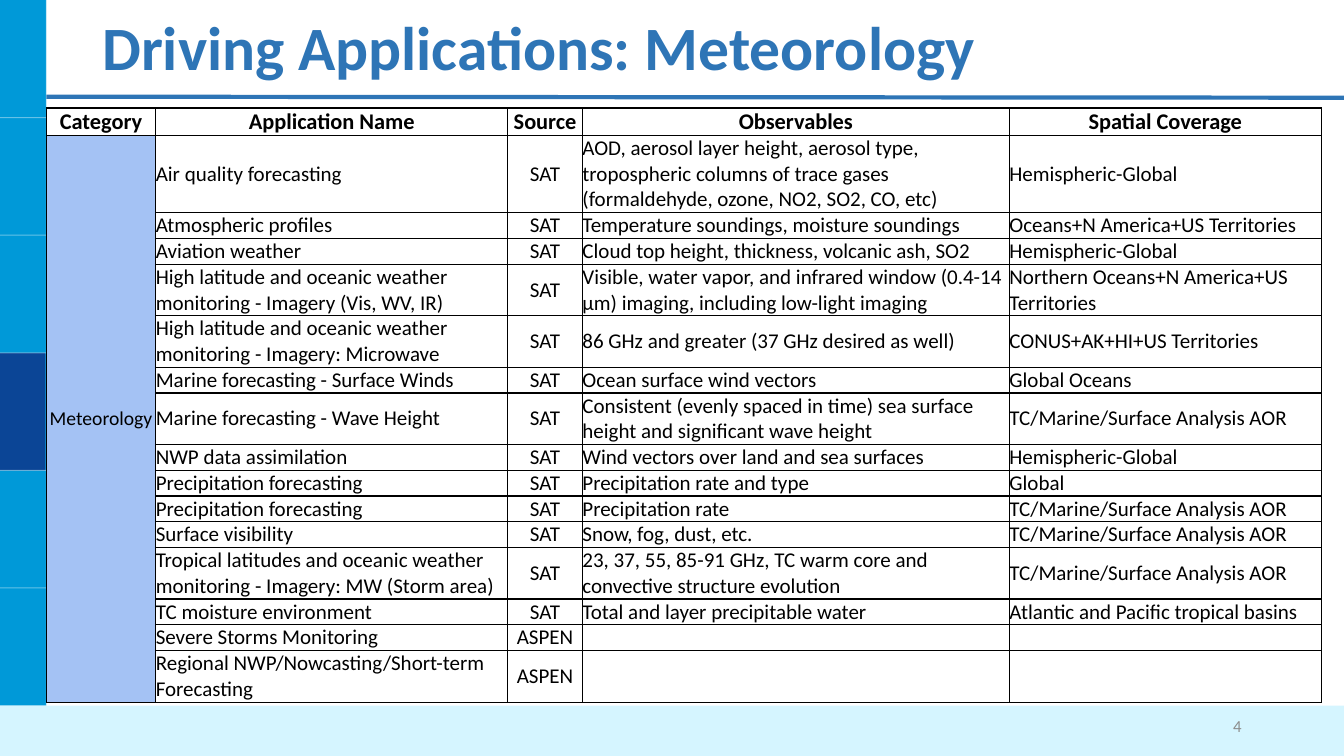
from dataclasses import dataclass

from lxml import etree
from pptx import Presentation
from pptx.dml.color import RGBColor
from pptx.enum.shapes import MSO_CONNECTOR, MSO_SHAPE
from pptx.enum.text import MSO_ANCHOR, PP_ALIGN
from pptx.oxml.ns import qn
from pptx.util import Pt

RECT = MSO_SHAPE.RECTANGLE
STRAIGHT = MSO_CONNECTOR.STRAIGHT
MIDDLE = MSO_ANCHOR.MIDDLE
LEFT, CENTER, RIGHT = PP_ALIGN.LEFT, PP_ALIGN.CENTER, PP_ALIGN.RIGHT


@dataclass(frozen=True)
class Theme:
    font: str = "Calibri"
    blue: str = "2E75B6"
    bar: str = "0099D8"
    mark: str = "0B4596"
    foot: str = "D5F5FF"
    group: str = "A4C2F4"
    ink: str = "000000"
    gray: str = "8C8C8C"
    white: str = "FFFFFF"
    title: int = 44
    head: int = 16
    body: int = 15
    label: int = 14
    page: int = 12


THEME = Theme()
WIDTH, HEIGHT = 960, 540
SIDE = 33.1
STEP = 84
LINE = 18.4
COLS = (78.2, 251.4, 53.4, 305, 222.8)
HEADS = ("Category", "Application Name", "Source", "Observables", "Spatial Coverage")
ALIGNS = (CENTER, LEFT, CENTER, LEFT, LEFT)
AOR = "TC/Marine/Surface Analysis AOR"
# Lines of text in the row, then its cells
ROWS = (
    (3, "Air quality forecasting", "SAT",
     "AOD, aerosol layer height, aerosol type, tropospheric columns of trace gases "
     "(formaldehyde, ozone, NO2, SO2, CO, etc)", "Hemispheric-Global"),
    (1, "Atmospheric profiles", "SAT", "Temperature soundings, moisture soundings",
     "Oceans+N America+US Territories"),
    (1, "Aviation weather", "SAT", "Cloud top height, thickness, volcanic ash, SO2",
     "Hemispheric-Global"),
    (2, "High latitude and oceanic weather monitoring - Imagery (Vis, WV, IR)", "SAT",
     "Visible, water vapor, and infrared window (0.4-14 µm) imaging, "
     "including low-light imaging", "Northern Oceans+N America+US Territories"),
    (2, "High latitude and oceanic weather monitoring - Imagery: Microwave", "SAT",
     "86 GHz and greater (37 GHz desired as well)", "CONUS+AK+HI+US Territories"),
    (1, "Marine forecasting - Surface Winds", "SAT", "Ocean surface wind vectors",
     "Global Oceans"),
    (2, "Marine forecasting - Wave Height", "SAT",
     "Consistent (evenly spaced in time) sea surface height and significant wave height",
     AOR),
    (1, "NWP data assimilation", "SAT", "Wind vectors over land and sea surfaces",
     "Hemispheric-Global"),
    (1, "Precipitation forecasting", "SAT", "Precipitation rate and type", "Global"),
    (1, "Precipitation forecasting", "SAT", "Precipitation rate", AOR),
    (1, "Surface visibility", "SAT", "Snow, fog, dust, etc.", AOR),
    (2, "Tropical latitudes and oceanic weather monitoring - Imagery: MW (Storm area)",
     "SAT", "23, 37, 55, 85-91 GHz, TC warm core and convective structure evolution", AOR),
    (1, "TC moisture environment", "SAT", "Total and layer precipitable water",
     "Atlantic and Pacific tropical basins"),
    (1, "Severe Storms Monitoring", "ASPEN", "", ""),
    (2, "Regional NWP/Nowcasting/Short-term Forecasting", "ASPEN", "", ""),
)


def rgb(color):
    return RGBColor.from_string(color)


def add_rect(slide, box, color):
    shape = slide.shapes.add_shape(RECT, *map(Pt, box))
    shape.shadow.inherit = False
    shape.fill.solid()
    shape.fill.fore_color.rgb = rgb(color)
    shape.line.fill.background()


def add_line(slide, ends, color, width, alpha=None):
    """Draw a line; alpha is its opacity in percent."""
    line = slide.shapes.add_connector(STRAIGHT, *map(Pt, ends))
    line.line.color.rgb = rgb(color)
    line.line.width = Pt(width)
    props = line._element.spPr
    etree.SubElement(props, qn("a:effectLst"))
    if alpha:
        tint = props.find(".//" + qn("a:srgbClr"))
        etree.SubElement(tint, qn("a:alpha"), val=str(alpha * 1000))


def write(frame, text, size, color, align=LEFT, bold=False):
    para = frame.paragraphs[0]
    para.alignment = align
    if not text:
        etree.SubElement(para._p, qn("a:endParaRPr"), sz=str(size * 100))
        return para
    run = para.add_run()
    run.text = text
    style = {"name": THEME.font, "size": Pt(size), "bold": bold}
    for key, value in style.items():
        setattr(run.font, key, value)
    run.font.color.rgb = rgb(color)
    return para


def add_text(slide, box, text, size, color, align=LEFT, bold=False):
    frame = slide.shapes.add_textbox(*map(Pt, box)).text_frame
    frame.word_wrap = True
    frame.vertical_anchor = MIDDLE
    return write(frame, text, size, color, align, bold)


def add_edges(cell):
    props = cell._tc.get_or_add_tcPr()
    for side in ("lnL", "lnR", "lnT", "lnB"):
        edge = etree.SubElement(props, qn("a:" + side), w=str(Pt(1)))
        fill = etree.SubElement(edge, qn("a:solidFill"))
        etree.SubElement(fill, qn("a:srgbClr"), val=THEME.ink)


def fill_cell(cell, text, size, align, bold=False, color=None):
    add_edges(cell)
    style = {"margin_left": 0, "margin_right": 0, "margin_top": 0,
             "margin_bottom": 0, "vertical_anchor": MIDDLE}
    for key, value in style.items():
        setattr(cell, key, value)
    if color:
        cell.fill.solid()
        cell.fill.fore_color.rgb = rgb(color)
    else:
        cell.fill.background()
    write(cell.text_frame, text, size, THEME.ink, align, bold)


def add_grid(slide):
    tall = [19.6] + [LINE * row[0] for row in ROWS]
    box = (SIDE, 77.2, sum(COLS), sum(tall))
    table = slide.shapes.add_table(len(tall), len(COLS), *map(Pt, box)).table
    table.first_row = table.horz_banding = False
    for col, width in zip(table.columns, COLS):
        col.width = Pt(width)
    for row, height in zip(table.rows, tall):
        row.height = Pt(height)
    for c, text in enumerate(HEADS):
        fill_cell(table.cell(0, c), text, THEME.head, CENTER, bold=True)
    for r, (_, *texts) in enumerate(ROWS, 1):
        group = "Meteorology" if r == 1 else ""
        fill_cell(table.cell(r, 0), group, THEME.label, CENTER, color=THEME.group)
        for c, text in enumerate(texts, 1):
            fill_cell(table.cell(r, c), text, THEME.body, ALIGNS[c])
    table.cell(1, 0).merge(table.cell(len(ROWS), 0))


def add_frame(slide):
    """Draw the side bar, the footer and the rule under the title."""
    add_rect(slide, (0, 0, SIDE, HEIGHT), THEME.bar)
    add_rect(slide, (0, 3 * STEP, 32.4, STEP), THEME.mark)
    for n in range(1, 7):
        add_line(slide, (0, n * STEP, SIDE, n * STEP), THEME.white, 0.75, 40)
    add_line(slide, (SIDE, 0, SIDE, HEIGHT), THEME.white, 0.75, 40)
    add_rect(slide, (0, 6 * STEP, WIDTH, HEIGHT - 6 * STEP), THEME.foot)
    add_line(slide, (SIDE, 69.1, WIDTH, 69.8), THEME.blue, 3)


def main():
    deck = Presentation()
    deck.slide_width, deck.slide_height = Pt(WIDTH), Pt(HEIGHT)
    slide = deck.slides.add_slide(deck.slide_layouts[6])
    add_frame(slide)
    title = add_text(slide, (66, 3, 828, 65.5), "Driving Applications: Meteorology",
                     THEME.title, THEME.blue, bold=True)
    title.line_spacing = 0.9
    add_text(slide, (678, 504, 216, 28.8), "4", THEME.page, THEME.gray, RIGHT)
    add_grid(slide)
    deck.save("out.pptx")


if __name__ == "__main__":
    main()
